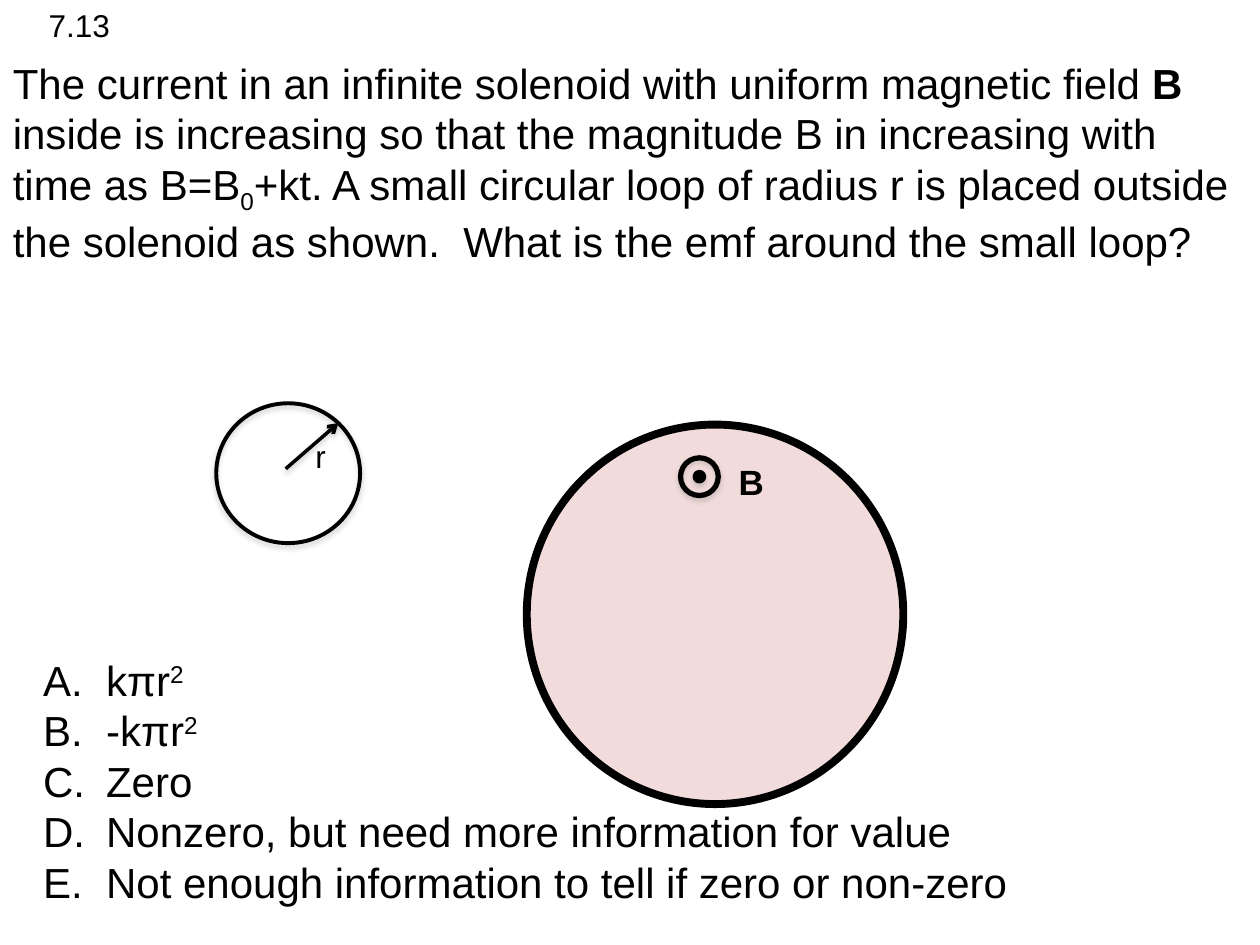
from lxml import etree
from pptx import Presentation
from pptx import util as u
from pptx.dml.color import RGBColor
from pptx.enum import shapes, text
from pptx.oxml.ns import qn

BLACK = RGBColor(0x00, 0x00, 0x00)
PINK = RGBColor(0xF2, 0xDC, 0xDB)
GREY = RGBColor(0x80, 0x80, 0x80)
FONT = "Arial"
SUBSCRIPT, SUPERSCRIPT = -25000, 30000

QUESTION = [
    ("The current in an infinite solenoid with uniform magnetic field ", False, 0),
    ("B", True, 0),
    (" inside is increasing so that the magnitude B in increasing with time as B=B", False, 0),
    ("0", False, SUBSCRIPT),
    ("+kt. A small circular loop of radius r is placed outside the solenoid as shown."
     "  What is the emf around the small loop?", False, 0),
]
ANSWERS = [
    [("kπr", False, 0), ("2", False, SUPERSCRIPT)],
    [("-kπr", False, 0), ("2", False, SUPERSCRIPT)],
    [("Zero", False, 0)],
    [("Nonzero, but need more information for value", False, 0)],
    [("Not enough information to tell if zero or non-zero", False, 0)],
]


def add_shadow(shape, alpha):
    """Give a shape a soft grey shadow that falls straight down."""
    properties = shape.element.spPr
    effects = properties.find(qn("a:effectLst"))
    if effects is None:
        effects = etree.SubElement(properties, qn("a:effectLst"))
    shadow = etree.SubElement(effects, qn("a:outerShdw"), blurRad=str(u.Pt(3.1)),
                              dist=str(u.Pt(1.8)), dir="5400000", rotWithShape="0")
    colour = etree.SubElement(shadow, qn("a:srgbClr"), val=str(GREY))
    etree.SubElement(colour, qn("a:alpha"), val=str(alpha * 1000))


def add_circle(parent, left, top, width, height, weight, fill=None, shadow=True):
    """Draw a black-edged ellipse."""
    circle = parent.add_shape(shapes.MSO_SHAPE.OVAL, left, top, width, height)
    circle.shadow.inherit = False
    if fill is None:
        circle.fill.background()
    else:
        circle.fill.solid()
        circle.fill.fore_color.rgb = fill
    circle.line.color.rgb = BLACK
    circle.line.width = u.Pt(weight)
    if shadow:
        add_shadow(circle, 35)
    return circle


def add_text(parent, left, top, width, height, paras, size, wrap=True):
    """Write paragraphs made of (wording, bold, baseline) spans."""
    box = parent.add_textbox(left, top, width, height)
    frame = box.text_frame
    frame.word_wrap = wrap
    for index, spans in enumerate(paras):
        para = frame.add_paragraph() if index else frame.paragraphs[0]
        for wording, bold, baseline in spans:
            span = para.add_run()
            span.text = wording
            span.font.name = FONT
            span.font.size = u.Pt(size)
            span.font.bold = bold
            span.font.color.rgb = BLACK
            if baseline:
                span.font._element.set("baseline", str(baseline))
    return box


def add_question(page, left, top, width, height):
    """Write the question, centred vertically in its box."""
    box = add_text(page, left, top, width, height, [QUESTION], 24)
    box.text_frame.vertical_anchor = text.MSO_ANCHOR.MIDDLE


def add_answers(page, left, top, width, height):
    """Write the lettered answers with a hanging indent."""
    box = add_text(page, left, top, width, height, ANSWERS, 24)
    indent = u.Cm(1.27)
    for para in box.text_frame.paragraphs:
        properties = para._p.get_or_add_pPr()
        properties.set("marL", str(indent))
        properties.set("indent", str(-indent))
        etree.SubElement(properties, qn("a:buFont"), typeface=FONT)
        etree.SubElement(properties, qn("a:buAutoNum"), type="alphaUcPeriod")


def add_solenoid(page, left, top, width, height):
    """Draw the solenoid with its field symbol and label."""
    add_circle(page, left, top, width, height, 4.5, PINK, shadow=False)
    add_text(page, left + u.Cm(4.02), top + u.Cm(0.6), u.Cm(1.02), u.Cm(1.09),
             [[("B", True, 0)]], 20)
    symbol = page.add_group_shape().shapes
    ring, dot = u.Cm(0.76), u.Cm(0.25)
    across, down = left + u.Cm(3.1), top + u.Cm(0.67)
    inset = (ring - dot) // 2
    add_circle(symbol, across, down, ring, ring, 3)
    add_circle(symbol, across + inset, down + inset, dot, dot, 0.75, BLACK)


def add_loop(page, left, top, width, height):
    """Draw the small loop with its radius arrow and label."""
    loop = page.add_group_shape().shapes
    add_circle(loop, left, top, width, height, 2.25)
    radius = loop.add_connector(shapes.MSO_CONNECTOR.STRAIGHT,
                                left + u.Cm(1.4), top + u.Cm(1.32),
                                left + u.Cm(2.46), top + u.Cm(0.4))
    radius.line.color.rgb = BLACK
    radius.line.width = u.Pt(2)
    etree.SubElement(radius.element.spPr.find(qn("a:ln")), qn("a:tailEnd"), type="arrow")
    add_shadow(radius, 38)
    add_text(loop, left + u.Cm(1.75), top + u.Cm(0.56), u.Cm(0.71), u.Cm(1.02),
             [[("r", False, 0)]], 18, wrap=False)


def main():
    """Build the slide and save it."""
    deck = Presentation()
    deck.slide_width, deck.slide_height = u.Cm(25.4), u.Cm(19.05)
    page = deck.slides.add_slide(deck.slide_layouts[6]).shapes
    add_solenoid(page, u.Cm(10.62), u.Cm(8.56), u.Cm(7.59), u.Cm(7.65))
    add_question(page, u.Cm(0.01), u.Cm(0), u.Cm(25.3), u.Cm(6.52))
    add_answers(page, u.Cm(0.62), u.Cm(13.07), u.Cm(22.81), u.Cm(5.33))
    add_loop(page, u.Cm(4.36), u.Cm(8.13), u.Cm(2.9), u.Cm(2.82))
    add_text(page, u.Cm(0.73), u.Cm(0), u.Cm(1.75), u.Cm(1.02),
             [[("7.13", False, 0)]], 18, wrap=False)
    deck.save("out.pptx")


if __name__ == "__main__":
    main()
